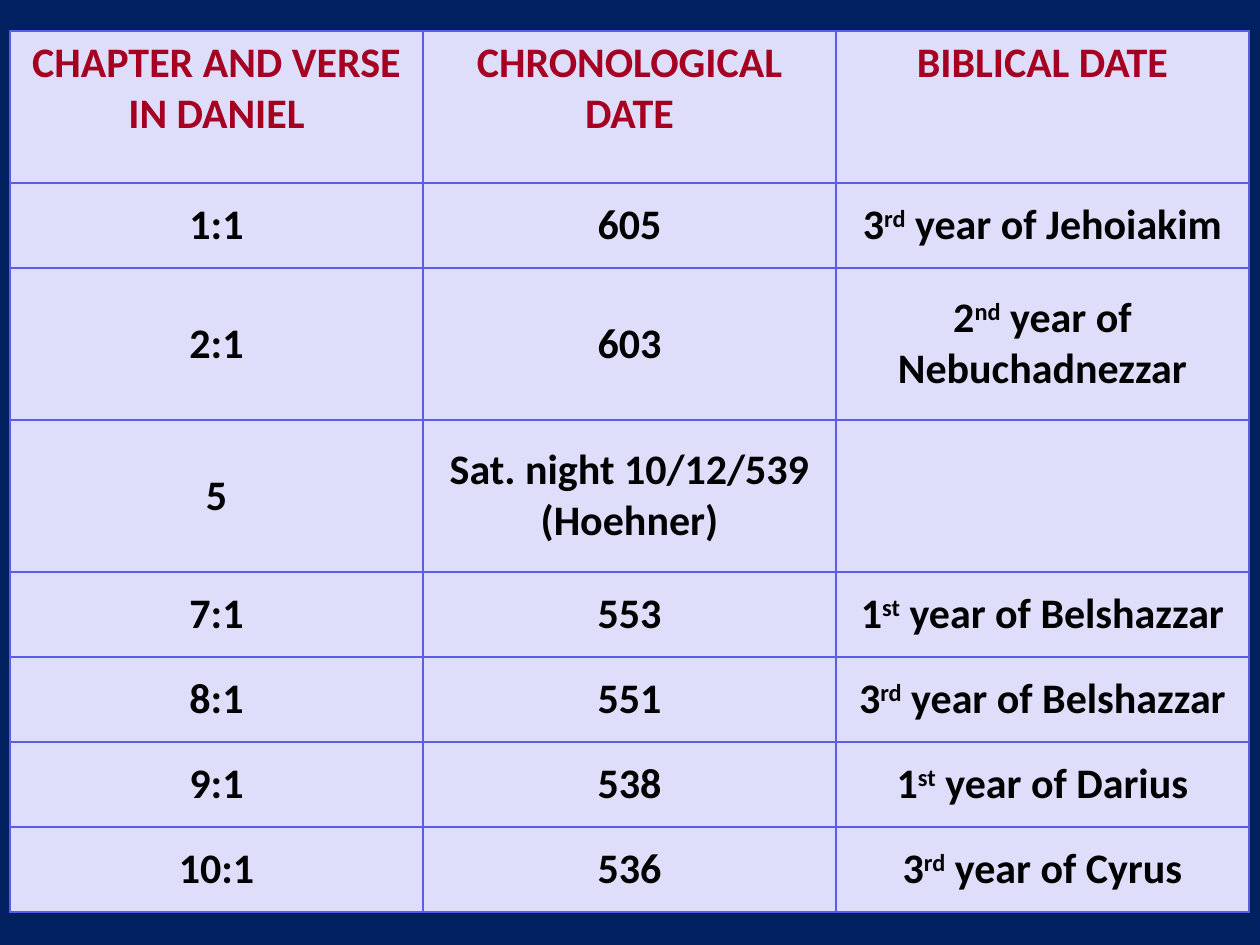
import pptx
import pptx.dml.color
import pptx.enum.text
import pptx.util
from lxml import etree
from pptx.oxml.ns import qn

PX = 914400 / 126
COLORS = {"back": "002060", "cell": "DEDEFA", "border": "5C5CE7",
          "heading": "A50021", "body": "000000"}
ROWS = [
    ("CHAPTER AND VERSE IN DANIEL", "CHRONOLOGICAL DATE", "BIBLICAL DATE"),
    ("1:1", "605", "3^rd^ year of Jehoiakim"),
    ("2:1", "603", "2^nd^ year of Nebuchadnezzar"),
    ("5", "Sat. night 10/12/539 (Hoehner)", ""),
    ("7:1", "553", "1^st^ year of Belshazzar"),
    ("8:1", "551", "3^rd^ year of Belshazzar"),
    ("9:1", "538", "1^st^ year of Darius"),
    ("10:1", "536", "3^rd^ year of Cyrus"),
]
LEFT, TOP, COL_WIDTH = 10, 31, 413
ROW_HEIGHTS = [152, 85, 152, 152, 85, 85, 85, 85]


def px(n):
    return pptx.util.Emu(round(n * PX))


def write_text(tf, text, color="body", size=24, font="Calibri", bold=True):
    """Write one centred paragraph; parts between ^ marks are superscript."""
    p = tf.paragraphs[0]
    p.alignment = pptx.enum.text.PP_ALIGN.CENTER
    p.space_before = pptx.util.Pt(size * 0.2)
    for i, part in enumerate(text.split("^")):
        if not part:
            continue
        r = p.add_run()
        r.text = part
        r.font.name, r.font.size, r.font.bold = font, pptx.util.Pt(size), bold
        r.font.color.rgb = pptx.dml.color.RGBColor.from_string(COLORS[color])
        if i % 2:
            r.font._element.set("baseline", "30000")


prs = pptx.Presentation()
prs.slide_width, prs.slide_height = px(1260), px(945)
s = prs.slides.add_slide(prs.slide_layouts[6])
s.background.fill.solid()
s.background.fill.fore_color.rgb = pptx.dml.color.RGBColor.from_string(COLORS["back"])

table = s.shapes.add_table(len(ROWS), 3, px(LEFT), px(TOP),
                           px(3 * COL_WIDTH), px(sum(ROW_HEIGHTS))).table
table.horz_banding = False
for col in table.columns:
    col.width = px(COL_WIDTH)

for i, (texts, height) in enumerate(zip(ROWS, ROW_HEIGHTS)):
    table.rows[i].height = px(height)
    for j, text in enumerate(texts):
        cell = table.cell(i, j)
        tcPr = cell._tc.get_or_add_tcPr()
        for side in ("a:lnL", "a:lnR", "a:lnT", "a:lnB"):
            ln = etree.SubElement(tcPr, qn(side), w=str(pptx.util.Pt(1)))
            line_fill = etree.SubElement(ln, qn("a:solidFill"))
            etree.SubElement(line_fill, qn("a:srgbClr"), val=COLORS["border"])
        cell.fill.solid()
        cell.fill.fore_color.rgb = pptx.dml.color.RGBColor.from_string(COLORS["cell"])
        if i > 0:
            cell.vertical_anchor = pptx.enum.text.MSO_ANCHOR.MIDDLE
        write_text(cell.text_frame, text, color="body" if i else "heading")

prs.save("out.pptx")
